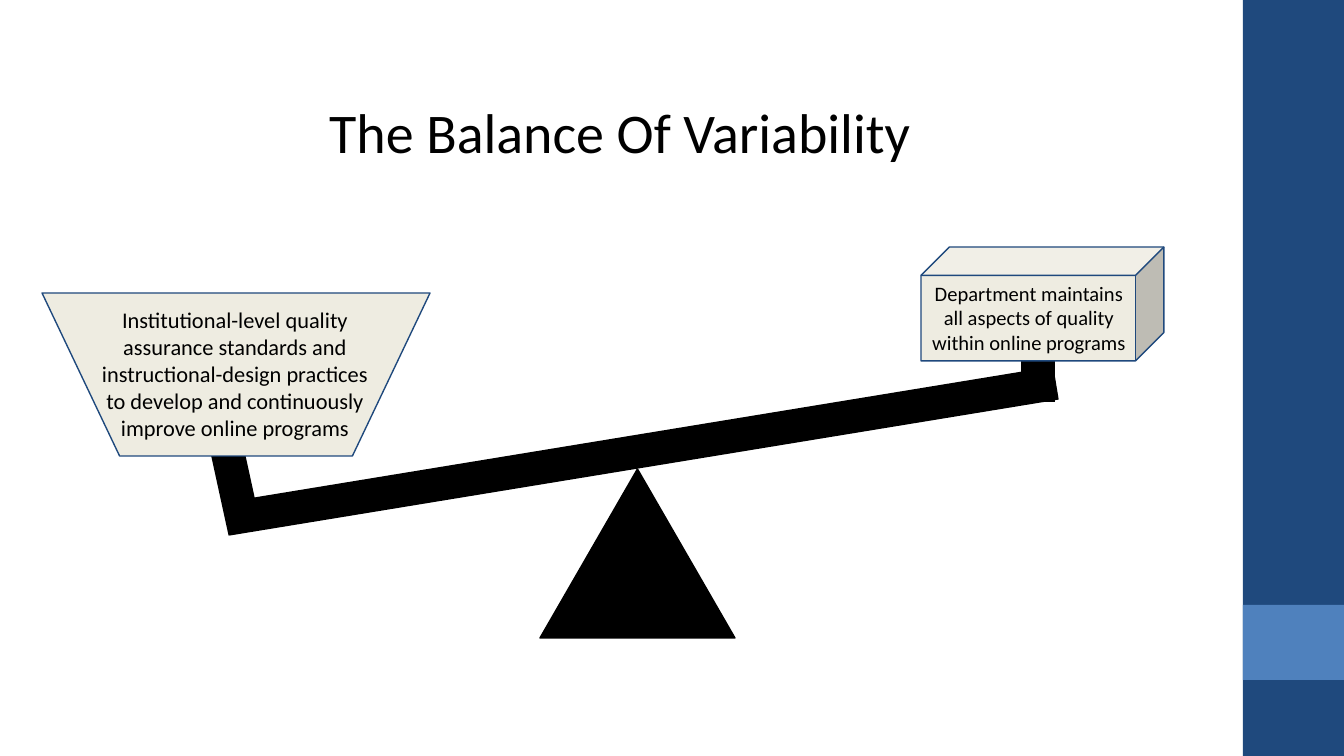
from pptx import Presentation
from pptx.dml.color import RGBColor
from pptx.enum.shapes import MSO_CONNECTOR, MSO_SHAPE
from pptx.enum.text import MSO_ANCHOR, PP_ALIGN
from pptx.oxml.ns import qn
from pptx.util import Inches, Pt
from lxml.etree import SubElement

PX_PER_INCH = 134.4
WIDTH, HEIGHT = 1344, 756
SIDEBAR_LEFT = 1243

NAVY = RGBColor(0x1F, 0x49, 0x7D)
BLUE = RGBColor(0x4F, 0x81, 0xBD)
CREAM = RGBColor(0xEE, 0xEC, 0xE1)
BLACK = RGBColor(0, 0, 0)


def px(n):
    return Inches(n / PX_PER_INCH)


def add_block(s, kind, box, fill, line=None):
    """Add a filled preset shape, outlined only when a line colour is given."""
    sp = s.shapes.add_shape(kind, *map(px, box))
    sp.shadow.inherit = False
    sp.fill.solid()
    sp.fill.fore_color.rgb = fill
    if line is None:
        sp.line.fill.background()
    else:
        sp.line.color.rgb = line
        sp.line.width = Pt(0.75)
    return sp


def add_bar(s, start, end):
    """Add one thick black bar of the seesaw."""
    bar = s.shapes.add_connector(MSO_CONNECTOR.STRAIGHT, *map(px, start + end))
    bar.line.color.rgb = BLACK
    bar.line.width = Pt(18)
    SubElement(bar._element.spPr, qn("a:effectLst"))


def add_text(s, box, paragraphs, size, anchor=MSO_ANCHOR.MIDDLE, before=0, after=0):
    tf = s.shapes.add_textbox(*map(px, box)).text_frame
    tf.word_wrap = True
    tf.vertical_anchor = anchor
    tf.margin_left = tf.margin_right = Inches(0.1)
    tf.margin_top = tf.margin_bottom = Inches(0.1)
    for i, text in enumerate(paragraphs):
        p = tf.add_paragraph() if i else tf.paragraphs[0]
        p.alignment = PP_ALIGN.CENTER
        p.space_before, p.space_after = Pt(before), Pt(after)
        r = p.add_run()
        r.text = text
        r.font.name = "Calibri"
        r.font.size = Pt(size)
        r.font.color.rgb = BLACK


def add_sidebar(s):
    width = WIDTH - SIDEBAR_LEFT
    add_block(s, MSO_SHAPE.RECTANGLE, (SIDEBAR_LEFT, 0, width, HEIGHT), NAVY)
    add_block(s, MSO_SHAPE.RECTANGLE, (SIDEBAR_LEFT, 605, width, 75), BLUE)


def add_seesaw(s):
    add_block(s, MSO_SHAPE.ISOSCELES_TRIANGLE, (540, 469, 195, 169), BLACK, BLACK)
    add_bar(s, (227, 519), (1056, 383))
    add_bar(s, (245, 532), (226, 445))
    add_bar(s, (1038, 402), (1038, 349))


def add_weights(s):
    add_block(s, MSO_SHAPE.FLOWCHART_MANUAL_OPERATION, (42, 293, 388, 163), CREAM, NAVY)
    add_text(s, (80, 293, 310, 163),
             ["Institutional-level quality assurance standards and "
              "instructional-design practices to develop and continuously "
              "improve online programs"], 12, MSO_ANCHOR.TOP)
    cube = add_block(s, MSO_SHAPE.CUBE, (921, 247, 243, 114), CREAM, NAVY)
    cube.adjustments[0] = 0.25
    add_text(s, (918, 276, 222, 83),
             ["Department maintains",
              "all aspects of quality within online programs"], 11)


def main():
    prs = Presentation()
    prs.slide_width, prs.slide_height = px(WIDTH), px(HEIGHT)
    s = prs.slides.add_slide(prs.slide_layouts[6])
    add_sidebar(s)
    add_seesaw(s)
    add_text(s, (-3, 90, 1246, 83), ["The Balance Of Variability"], 30, before=5, after=6)
    add_weights(s)
    prs.save("out.pptx")


if __name__ == "__main__":
    main()
